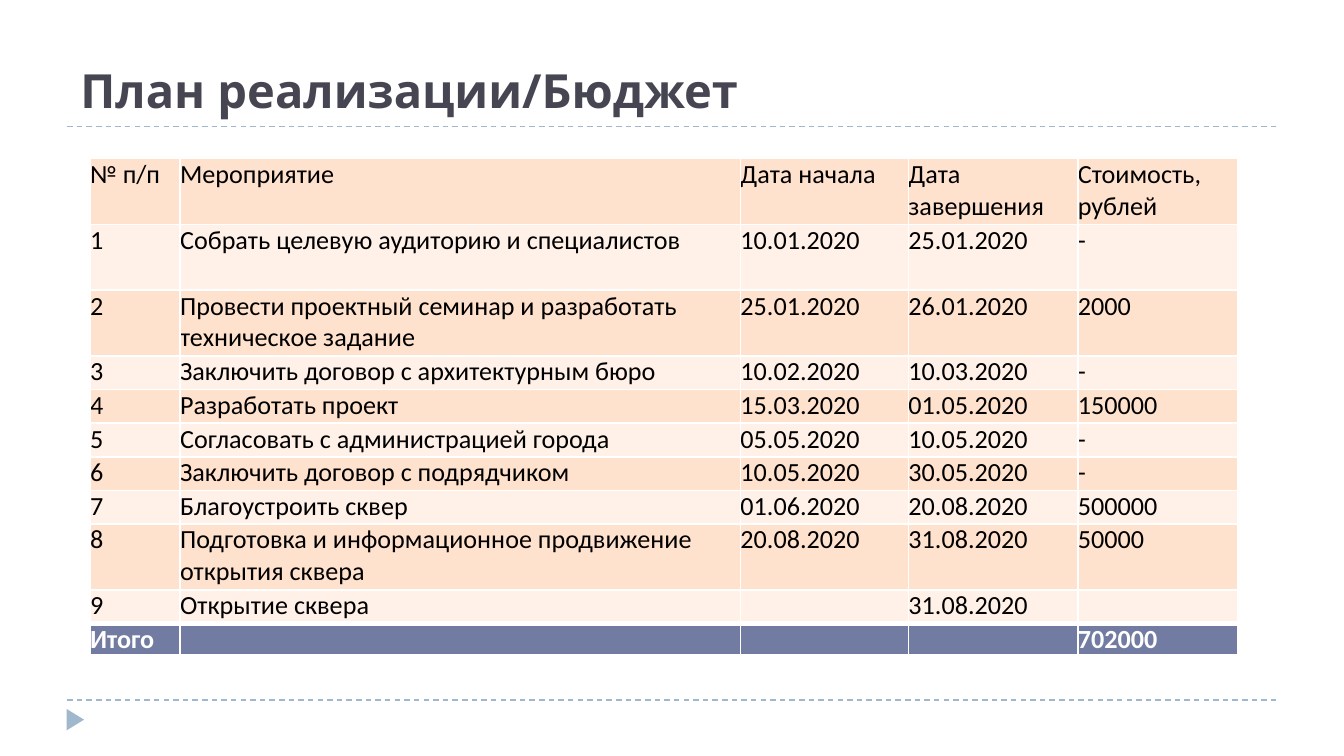
from lxml.etree import SubElement
from pptx import Presentation
from pptx.dml.color import RGBColor
from pptx.enum.dml import MSO_LINE
from pptx.enum.shapes import MSO_CONNECTOR, MSO_SHAPE
from pptx.enum.text import MSO_ANCHOR
from pptx.oxml.ns import qn
from pptx.util import Inches, Pt

WHITE = RGBColor(0xFF, 0xFF, 0xFF)
BLACK = RGBColor(0, 0, 0)
INK = RGBColor(0x46, 0x46, 0x53)
SKY = RGBColor(0x9F, 0xB8, 0xCD)
PEACH = RGBColor(0xFF, 0xE2, 0xCD)
CREAM = RGBColor(0xFF, 0xF1, 0xE8)
SLATE = RGBColor(0x72, 0x7C, 0xA3)

COLUMN_WIDTHS = [6.7, 41.7, 12.5, 12.6, 11.9]
TALL_ROWS = {0, 1, 2, 8}
PLAN = [
    ("№ п/п", "Мероприятие", "Дата начала", "Дата завершения", "Стоимость, рублей"),
    ("1", "Собрать целевую аудиторию и специалистов", "10.01.2020", "25.01.2020", "-"),
    ("2", "Провести проектный семинар и разработать техническое задание",
     "25.01.2020", "26.01.2020", "2000"),
    ("3", "Заключить договор с архитектурным бюро", "10.02.2020", "10.03.2020", "-"),
    ("4", "Разработать проект", "15.03.2020", "01.05.2020", "150000"),
    ("5", "Согласовать с администрацией города", "05.05.2020", "10.05.2020", "-"),
    ("6", "Заключить договор с подрядчиком", "10.05.2020", "30.05.2020", "-"),
    ("7", "Благоустроить сквер", "01.06.2020", "20.08.2020", "500000"),
    ("8", "Подготовка и информационное продвижение открытия сквера",
     "20.08.2020", "31.08.2020", "50000"),
    ("9", "Открытие сквера", "", "31.08.2020", ""),
    ("Итого", "", "", "", "702000"),
]


class PlanSlide:
    title_font = "Open Sans"
    table_font = "Calibri"

    def __init__(self, deck):
        self.unit = deck.slide_width / 100
        self.page = deck.slides.add_slide(deck.slide_layouts[6])

    def grid(self, *lengths):
        return [round(length * self.unit) for length in lengths]

    def style(self, para, name, size, color, bold):
        para.font.name = name
        para.font.size = Pt(size)
        para.font.color.rgb = color
        para.font.bold = bold

    def title(self, text, left, top, width, height):
        box = self.page.shapes.add_textbox(*self.grid(left, top, width, height))
        frame = box.text_frame
        frame.word_wrap = True
        frame.vertical_anchor = MSO_ANCHOR.BOTTOM
        para = frame.paragraphs[0]
        para.text = text
        self.style(para, self.title_font, 25.2, INK, True)

    def rule(self, left, right, row):
        line = self.page.shapes.add_connector(
            MSO_CONNECTOR.STRAIGHT, *self.grid(left, row, right, row))
        line.line.color.rgb = SKY
        line.line.width = Pt(0.75)
        line.line.dash_style = MSO_LINE.DASH
        SubElement(line._element.spPr, qn("a:effectLst"))

    def marker(self, left, top, width, height):
        triangle = self.page.shapes.add_shape(
            MSO_SHAPE.ISOSCELES_TRIANGLE, *self.grid(left, top, width, height))
        triangle.rotation = 90
        triangle.shadow.inherit = False
        triangle.fill.solid()
        triangle.fill.fore_color.rgb = SKY
        triangle.line.fill.background()

    def borders(self, cell, top):
        properties = cell._tc.get_or_add_tcPr()
        for side, width in (("L", 1), ("R", 1), ("T", top), ("B", 1)):
            edge = SubElement(properties, qn(f"a:ln{side}"), w=str(Pt(width)))
            fill = SubElement(edge, qn("a:solidFill"))
            SubElement(fill, qn("a:srgbClr"), val=str(WHITE))

    def cell(self, cell, text, fill, total):
        cell.margin_left = cell.margin_right = 0
        cell.margin_top = cell.margin_bottom = 0
        self.borders(cell, 3 if total else 1)
        cell.fill.solid()
        cell.fill.fore_color.rgb = fill
        para = cell.text_frame.paragraphs[0]
        para.text = text
        self.style(para, self.table_font, 14, WHITE if total else BLACK, total)

    def table(self, rows, widths, heights, left, top):
        frame = self.page.shapes.add_table(
            len(rows), len(widths), *self.grid(left, top, sum(widths), sum(heights)))
        table = frame.table
        for column, width in zip(table.columns, self.grid(*widths)):
            column.width = width
        for row, height in zip(table.rows, self.grid(*heights)):
            row.height = height
        for index, texts in enumerate(rows):
            total = index == len(rows) - 1
            fill = SLATE if total else (PEACH, CREAM)[index % 2]
            for column, text in enumerate(texts):
                self.cell(table.cell(index, column), text, fill, total)


def main():
    deck = Presentation()
    deck.slide_width = Inches(10)
    deck.slide_height = deck.slide_width * 9 // 16
    slide = PlanSlide(deck)
    for row in (52.1, 9.4):
        slide.rule(5, 95, row)
    slide.marker(4.8, 52.9, 1.6, 1.3)
    slide.title("План реализации/Бюджет", 5, 1.2, 90, 8.1)
    heights = [4.9 if index in TALL_ROWS else 2.5 for index in range(len(PLAN) - 1)]
    slide.table(PLAN, COLUMN_WIDTHS, heights + [2.2], 6.7, 11.8)
    deck.save("out.pptx")


if __name__ == "__main__":
    main()
